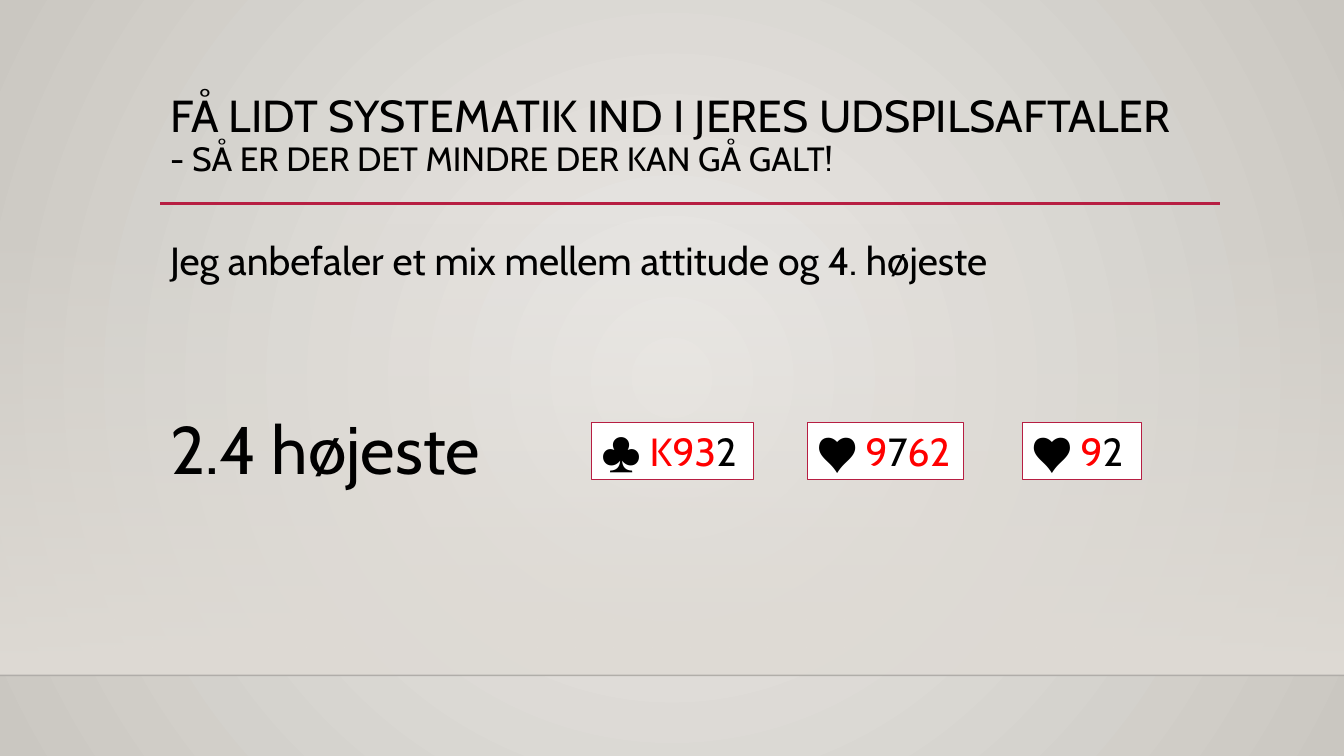
import pptx
import pptx.dml.color
import pptx.enum.shapes
import pptx.enum.text
import pptx.oxml
import pptx.oxml.ns
import pptx.util
from pptx.util import Inches

FONT = "Cabin"
BLACK, RED, CRIMSON = "000000", "FF0000", "B71E42"
WIDTH, HEIGHT = 13.33, 7.5
FLOOR = 6.7
LEFT, CONTENT_WIDTH = 1.59, 10.5
HAND_TOP, HAND_HEIGHT = 4.19, 0.57
HANDS = [
    (5.87, 1.6, [("♣️ ", BLACK), ("K93", RED), ("2", BLACK)]),
    (8.01, 1.55, [("♥️ ", BLACK), ("9", RED), ("7", BLACK), ("62", RED)]),
    (10.14, 1.18, [("♥️ ", BLACK), ("9", RED), ("2", BLACK)]),
]


def rgb(value):
    return pptx.dml.color.RGBColor.from_string(value)


def drawing_element(markup):
    return pptx.oxml.parse_xml(markup.replace(" ", f' {pptx.oxml.ns.nsdecls("a")} ', 1))


def set_alpha(parent, percent):
    """Make the first colour found inside parent partly transparent."""
    color = parent.find(".//" + pptx.oxml.ns.qn("a:srgbClr"))
    color.append(drawing_element(f'<a:alpha val="{percent * 1000}"/>'))


def set_gradient(fill, colors):
    fill.gradient()
    for stop, (position, color) in zip(fill.gradient_stops, zip((0, 1), colors)):
        stop.position = position
        stop.color.rgb = rgb(color)


def add_run(paragraph, text, size, color=BLACK):
    run = paragraph.add_run()
    run.text = text
    run.font.name = FONT
    run.font.size = pptx.util.Pt(size)
    run.font.color.rgb = rgb(color)


def add_rule(slide, left, top, width, color, weight):
    rule = slide.shapes.add_connector(
        pptx.enum.shapes.MSO_CONNECTOR.STRAIGHT,
        Inches(left), Inches(top), Inches(left + width), Inches(top))
    rule.line.color.rgb = rgb(color)
    rule.line.width = pptx.util.Pt(weight)
    rule._element.spPr.append(drawing_element("<a:effectLst />"))
    return rule


def add_rectangle(slide, left, top, width, height):
    rectangle = slide.shapes.add_shape(
        pptx.enum.shapes.MSO_SHAPE.RECTANGLE,
        Inches(left), Inches(top), Inches(width), Inches(height))
    rectangle.shadow.inherit = False
    return rectangle


def add_text_frame(slide, left, top, width, height):
    frame = slide.shapes.add_textbox(
        Inches(left), Inches(top), Inches(width), Inches(height)).text_frame
    frame.word_wrap = True
    return frame


def draw_backdrop(slide):
    """Round glow behind everything, a wall fading in and the floor's edge."""
    background = slide.background.fill
    set_gradient(background, ("ECEAE7", "CAC7C1"))
    linear = slide._element.find(".//" + pptx.oxml.ns.qn("a:lin"))
    linear.getparent().replace(linear, drawing_element(
        '<a:path path="circle">'
        '<a:fillToRect l="50000" t="50000" r="50000" b="50000"/></a:path>'))

    wall_top = 2.21
    wall = add_rectangle(slide, 0, wall_top, WIDTH, FLOOR - wall_top)
    set_gradient(wall.fill, ("DFDBD5", "DFDBD5"))
    wall.fill.gradient_angle = 270
    set_alpha(wall._element.spPr, 0)
    wall.line.fill.background()

    floor_edge = add_rule(slide, 0, FLOOR, WIDTH, "000001", 1)
    set_alpha(floor_edge._element.spPr, 20)


def draw_title(slide, left, top, width, height):
    add_rule(slide, left, top + 1.14, width + 0.01, CRIMSON, 2.5)
    title = add_text_frame(slide, left, top, width, height).paragraphs[0]
    title.line_spacing = 0.9
    add_run(title, "FÅ LIDT SYSTEMATIK IND I JERES UDSPILSAFTALER", 32)
    title.add_line_break()
    add_run(title, "- SÅ ER DER DET MINDRE DER KAN GÅ GALT!", 24)


def draw_body(slide, left, top, width, height):
    frame = add_text_frame(slide, left, top, width, height)
    advice = frame.paragraphs[0]
    add_run(advice, "Jeg anbefaler et mix mellem attitude og 4. højeste", 28)
    method = frame.add_paragraph()
    method.space_before = pptx.util.Pt(77)
    add_run(method, "2.4 højeste", 48)
    for paragraph in (advice, method):
        paragraph.line_spacing = 1.2


def draw_hand(slide, left, top, width, height, cards):
    hand = add_rectangle(slide, left, top, width, height)
    hand.fill.solid()
    hand.fill.fore_color.rgb = rgb("FFFFFF")
    hand.line.color.rgb = rgb(CRIMSON)
    hand.line.width = pptx.util.Pt(0.75)
    frame = hand.text_frame
    frame.word_wrap = False
    frame.auto_size = pptx.enum.text.MSO_AUTO_SIZE.SHAPE_TO_FIT_TEXT
    frame.vertical_anchor = pptx.enum.text.MSO_ANCHOR.TOP
    paragraph = frame.paragraphs[0]
    paragraph.alignment = pptx.enum.text.PP_ALIGN.LEFT
    for text, color in cards:
        add_run(paragraph, text, 28, color)


def main():
    presentation = pptx.Presentation()
    presentation.slide_width = Inches(WIDTH)
    presentation.slide_height = Inches(HEIGHT)
    slide = presentation.slides.add_slide(presentation.slide_layouts[6])
    draw_backdrop(slide)
    draw_title(slide, LEFT, 0.88, CONTENT_WIDTH, 1.15)
    draw_body(slide, LEFT, 2.2, CONTENT_WIDTH, 3.77)
    for left, width, cards in HANDS:
        draw_hand(slide, left, HAND_TOP, width, HAND_HEIGHT, cards)
    presentation.save("out.pptx")


if __name__ == "__main__":
    main()
